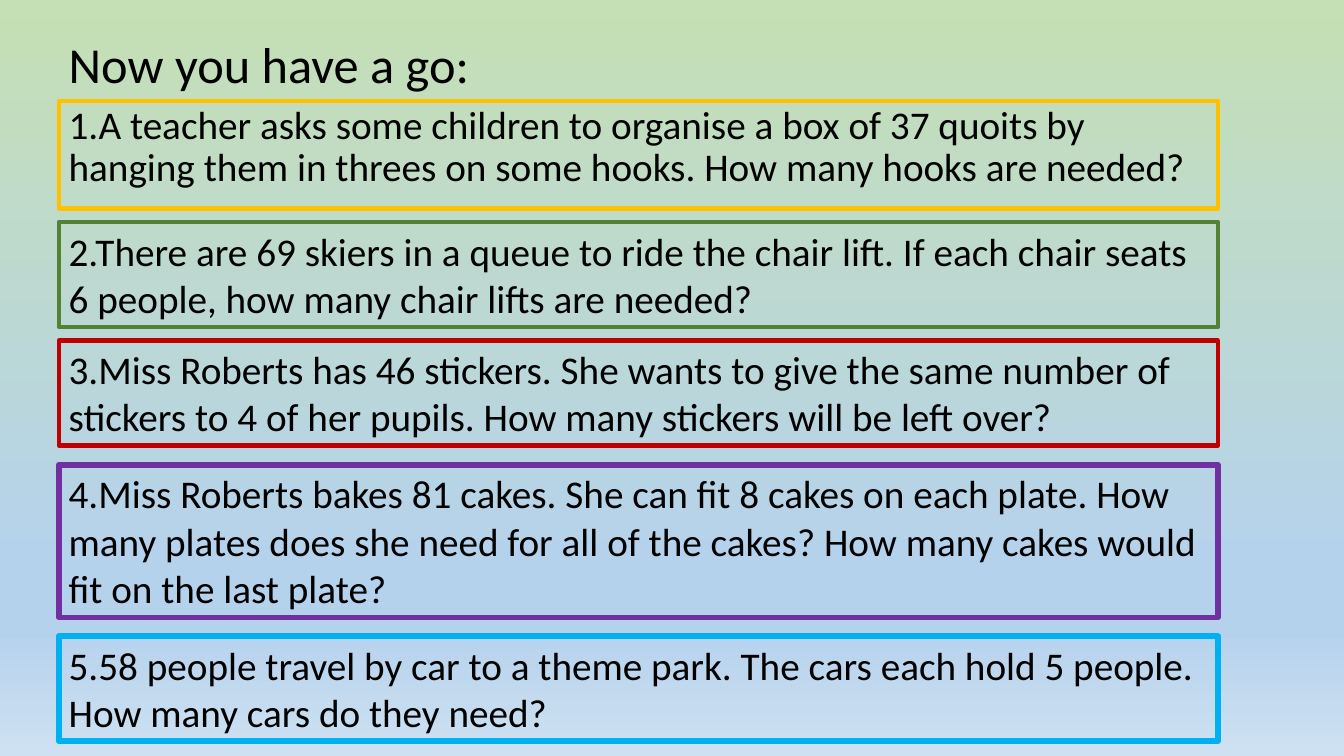
"""Build a slide of five division word problems in coloured frames."""
from copy import deepcopy
from pptx import Presentation
from pptx import util as u
from pptx.dml.color import RGBColor
from pptx.enum import text

HUES = {
    "ink": "000000", "gold": "FFC000", "green": "548235", "red": "C00000",
    "plum": "7030A0", "sky": "00B0F0",
    "leaf": "C5E0B4", "blue": "B5D2EC", "pale": "CEE1F2",
}
LEFT = 42


def add_box(top, width, height, words, size):
    box = slide.shapes.add_textbox(u.Pt(LEFT), u.Pt(top), u.Pt(width), u.Pt(height))
    frame = box.text_frame
    frame.word_wrap = True
    frame.auto_size = text.MSO_AUTO_SIZE.SHAPE_TO_FIT_TEXT
    run = frame.paragraphs[0].add_run()
    run.text = words
    run.font.name = "Calibri"
    run.font.size = u.Pt(size)
    run.font.color.rgb = RGBColor.from_string(HUES["ink"])
    return box


deck = Presentation()
deck.slide_width, deck.slide_height = u.Pt(960), u.Pt(540)
slide = deck.slides.add_slide(deck.slide_layouts[6])

fill = slide.background.fill
fill.gradient()
fill.gradient_angle = 270
stops = fill.gradient_stops
first = stops[0]._gs
for _ in range(2):
    first.addnext(deepcopy(first))
shades = [(0, "leaf"), (0.74, "blue"), (0.83, "blue"), (1, "pale")]
for stop, (place, hue) in zip(fill.gradient_stops, shades):
    stop.position = place
    stop.color.rgb = RGBColor.from_string(HUES[hue])

add_box(20, 392, 51, "Now you have a go:", 36)

tasks = [
    (72, 77, "gold", 3, "1.A teacher asks some children to organise a box of 37 quoits by hanging them in threes on some hooks. How many hooks are needed?"),
    (158.5, 75, "green", 3, "2.There are 69 skiers in a queue to ride the chair lift. If each chair seats 6 people, how many chair lifts are needed?"),
    (243.3, 75, "red", 3, "3.Miss Roberts has 46 stickers. She wants to give the same number of stickers to 4 of her pupils. How many stickers will be left over?"),
    (332, 109, "plum", 4, "4.Miss Roberts bakes 81 cakes. She can fit 8 cakes on each plate. How many plates does she need for all of the cakes? How many cakes would fit on the last plate?"),
    (454.5, 75, "sky", 4, "5.58 people travel by car to a theme park. The cars each hold 5 people. How many cars do they need?"),
]
boxes = []
for top, height, hue, weight, words in tasks:
    box = add_box(top, 828, height, words, 28)
    box.line.color.rgb = RGBColor.from_string(HUES[hue])
    box.line.width = u.Pt(weight)
    boxes.append(box)

lead = boxes[0].text_frame
lead.auto_size = text.MSO_AUTO_SIZE.NONE
lead.paragraphs[0].line_spacing = 0.9
lead.paragraphs[0].space_before = u.Pt(10)

deck.save("out.pptx")
